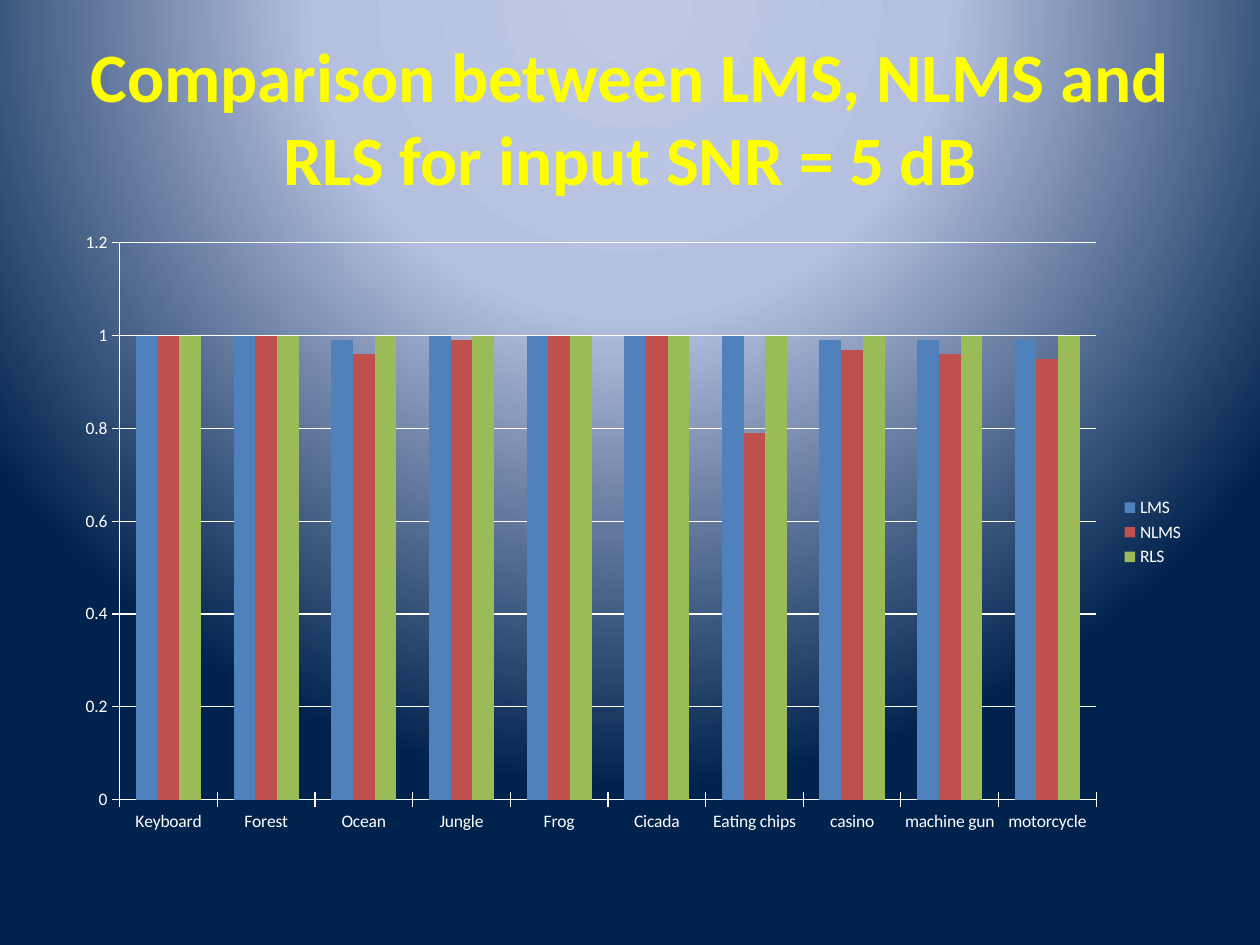
from dataclasses import dataclass

from lxml.etree import SubElement
from pptx import Presentation
from pptx.chart.data import CategoryChartData
from pptx.dml.color import RGBColor
from pptx.enum.chart import XL_CHART_TYPE as ChartType
from pptx.enum.chart import XL_LEGEND_POSITION as LegendPosition
from pptx.enum.chart import XL_TICK_MARK as TickMark
from pptx.enum.text import MSO_ANCHOR as Anchor
from pptx.enum.text import PP_ALIGN as Align
from pptx.oxml.ns import qn
from pptx.util import Pt

NOISES = ["Keyboard", "Forest", "Ocean", "Jungle", "Frog", "Cicada",
          "Eating chips", "casino", "machine gun", "motorcycle"]
FILTERS = [
    ("LMS", "4F81BD", [1, 1, 0.99, 1, 1, 1, 1, 0.99, 0.99, 0.99]),
    ("NLMS", "C0504D", [1, 1, 0.96, 0.99, 1, 1, 0.79, 0.97, 0.96, 0.95]),
    ("RLS", "9BBB59", [1] * len(NOISES)),
]


def color(value):
    return RGBColor.from_string(value)


@dataclass
class SlideBuilder:
    slide: object
    font: str = "Calibri"
    title_color: str = "FFFF00"
    chart_color: str = "FFFFFF"

    def background(self, stops, focus):
        self.slide.background.fill.gradient()
        gradient = next(self.slide.element.iter(qn("a:gradFill")))
        for child in list(gradient):
            gradient.remove(child)
        stop_list = SubElement(gradient, qn("a:gsLst"))
        for position, shade in stops:
            stop = SubElement(stop_list, qn("a:gs"), pos=str(position * 1000))
            SubElement(stop, qn("a:srgbClr"), val=shade)
        circle = SubElement(gradient, qn("a:path"))
        circle.set("path", "circle")
        edges = {side: str(share * 1000) for side, share in zip("ltrb", focus)}
        SubElement(circle, qn("a:fillToRect"), edges)

    def title(self, text, left, top, width, height, size):
        title = self.slide.shapes.title
        title.left, title.top = Pt(left), Pt(top)
        title.width, title.height = Pt(width), Pt(height)
        frame = title.text_frame
        frame.word_wrap = True
        frame.vertical_anchor = Anchor.MIDDLE
        paragraph = frame.paragraphs[0]
        paragraph.alignment = Align.CENTER
        run = paragraph.add_run()
        run.text = text
        run.font.name = self.font
        run.font.size = Pt(size)
        run.font.bold = True
        run.font.color.rgb = color(self.title_color)

    def column_chart(self, categories, series, left, top, width, height, size):
        data = CategoryChartData()
        data.categories = categories
        for name, _, values in series:
            data.add_series(name, values)
        chart = self.slide.shapes.add_chart(
            ChartType.COLUMN_CLUSTERED,
            Pt(left), Pt(top), Pt(width), Pt(height), data).chart
        chart.has_title = False
        chart.font.name = self.font
        chart.font.size = Pt(size)
        chart.font.color.rgb = color(self.chart_color)
        chart.has_legend = True
        chart.legend.position = LegendPosition.RIGHT
        chart.legend.include_in_layout = False

        plot = chart.plots[0]
        plot.vary_by_categories = False
        plot.gap_width = 150
        for columns, (_, fill, _) in zip(plot.series, series):
            columns.format.fill.solid()
            columns.format.fill.fore_color.rgb = color(fill)

        for axis in (chart.category_axis, chart.value_axis):
            axis.major_tick_mark = TickMark.CROSS
            self.line(axis.format.line)
        chart.value_axis.has_major_gridlines = True
        self.line(chart.value_axis.major_gridlines.format.line)

    def line(self, line):
        line.width = Pt(0.75)
        line.color.rgb = color(self.chart_color)


def main():
    deck = Presentation()
    deck.slide_width, deck.slide_height = Pt(720), Pt(540)
    builder = SlideBuilder(deck.slides.add_slide(deck.slide_layouts[5]))
    builder.background([(0, "BFC9E5"), (40, "B5C0E0"), (100, "00234D")],
                       (50, -80, 50, 180))
    builder.title("Comparison between LMS, NLMS and RLS for input SNR = 5 dB",
                  36, 21.6, 648, 90, 39.6)
    builder.column_chart(NOISES, FILTERS, 36, 126, 648, 356.4, 10)
    deck.save("out.pptx")


if __name__ == "__main__":
    main()
